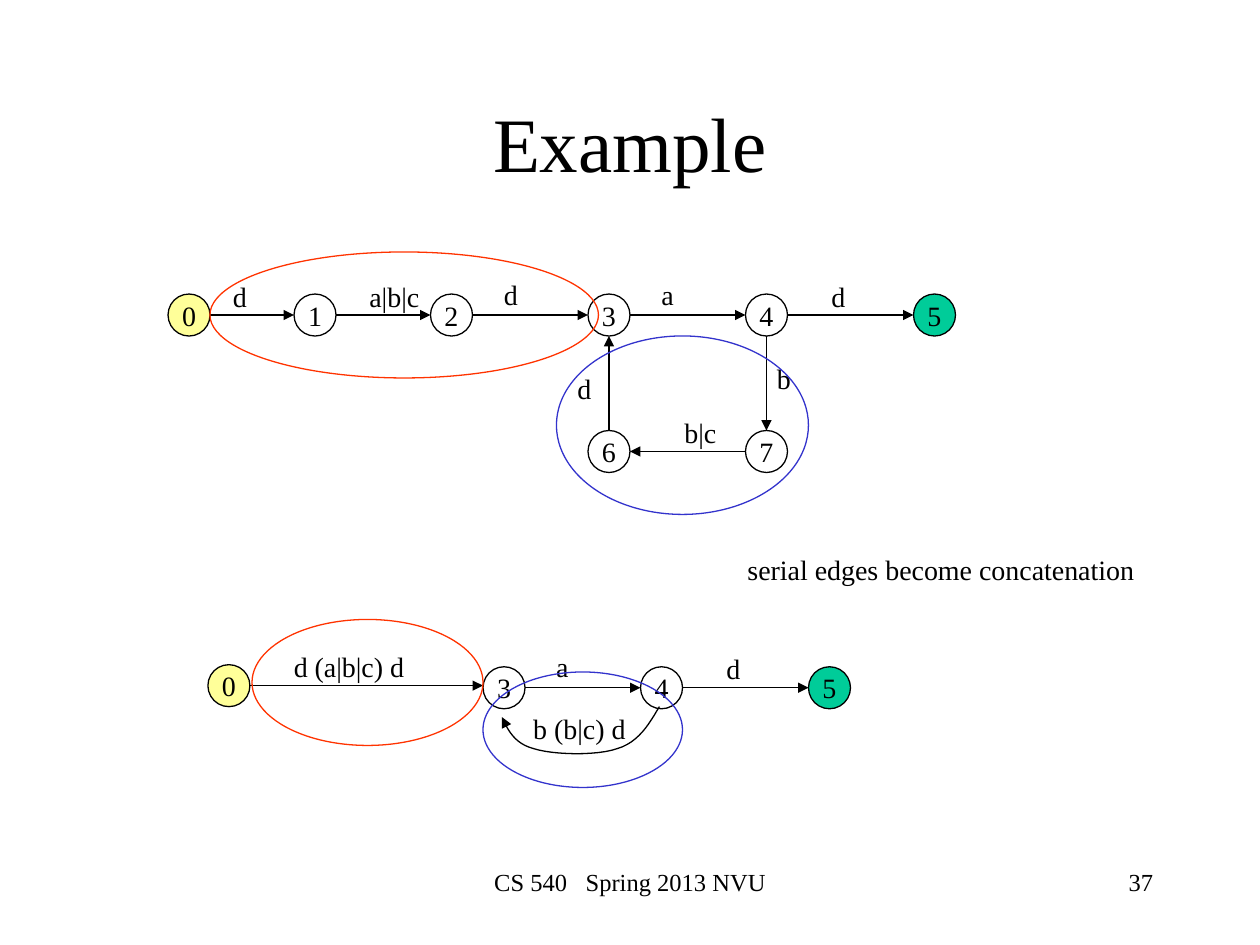
"""Build the slide on merging serial edges of a state graph."""
from dataclasses import dataclass

from lxml.etree import SubElement
from pptx import Presentation
from pptx.dml.color import RGBColor
from pptx.enum.shapes import MSO_CONNECTOR, MSO_SHAPE
from pptx.enum.text import MSO_ANCHOR, MSO_AUTO_SIZE, PP_ALIGN
from pptx.oxml.ns import qn
from pptx.util import Emu, Pt

PX = 7620
RAD = 20
FONT = "Times New Roman"
BLACK, RED, BLUE = "000000", "FF3300", "3333CC"
YELLOW, GREEN = "FFFF99", "00CC99"


@dataclass
class Node:
    name: str
    x: int
    y: int
    fill: str = ""


@dataclass
class Label:
    text: str
    x: int
    y: int
    w: int


@dataclass
class Ring:
    x: int
    y: int
    w: int
    h: int
    hue: str


TOP = [
    Node("0", 180, 300, YELLOW), Node("1", 300, 300), Node("2", 430, 300),
    Node("3", 580, 300), Node("4", 730, 300), Node("5", 890, 300, GREEN),
    Node("6", 580, 430), Node("7", 730, 430),
]
LOW = [
    Node("0", 218, 653, YELLOW), Node("3", 480, 655),
    Node("4", 630, 655), Node("5", 790, 655, GREEN),
]
GRAPHS = [(TOP, "01 12 23 34 45 47 76 63"), (LOW, "03 34 45")]
LABELS = [
    Label("d", 210, 260, 37), Label("a|b|c", 340, 260, 72),
    Label("d", 468, 258, 37), Label("a", 618, 258, 36),
    Label("d", 780, 260, 37), Label("b", 728, 338, 37),
    Label("b|c", 640, 390, 55), Label("d", 538, 348, 37),
    Label("d (a|b|c) d", 268, 613, 130), Label("a", 518, 613, 36),
    Label("d", 680, 615, 37), Label("b (b|c) d", 496, 672, 113),
    Label("serial edges become concatenation", 700, 520, 395),
]
RINGS = [
    Ring(200, 240, 370, 120, RED), Ring(530, 320, 240, 170, BLUE),
    Ring(240, 590, 220, 120, RED), Ring(460, 640, 190, 110, BLUE),
]
LOOP = [
    (628, 673), (618, 690), (608, 707), (588, 713), (568, 720),
    (527, 719), (508, 713), (490, 708), (484, 696), (478, 683),
]


def px(*nums: float) -> list[Emu]:
    """Turn px lengths into EMU."""
    return [Emu(round(n * PX)) for n in nums]


def color(code: str) -> RGBColor:
    """Turn a hex string into a colour."""
    return RGBColor.from_string(code)


def style(para, size: int, align=PP_ALIGN.LEFT) -> None:
    """Format a paragraph and its runs."""
    para.alignment = align
    for run in para.runs:
        run.font.size = Pt(size)
        run.font.name = FONT
        run.font.color.rgb = color(BLACK)


def stroke(shape, hue: str = BLACK) -> None:
    """Give a shape or connector a thin line."""
    shape.line.width = Pt(0.75)
    shape.line.color.rgb = color(hue)


def arrow(shape) -> None:
    """End a line with a triangle."""
    SubElement(shape.line._get_or_add_ln(), qn("a:tailEnd"), type="triangle")


def oval(slide, ring: Ring, fill: str = ""):
    """Draw an ellipse."""
    shape = slide.shapes.add_shape(
        MSO_SHAPE.OVAL, *px(ring.x, ring.y, ring.w, ring.h))
    shape.shadow.inherit = False
    if fill:
        shape.fill.solid()
        shape.fill.fore_color.rgb = color(fill)
    else:
        shape.fill.background()
    stroke(shape, ring.hue)
    return shape


def state(slide, node: Node) -> None:
    """Draw a numbered state."""
    ring = Ring(node.x - RAD, node.y - RAD, 2 * RAD, 2 * RAD, BLACK)
    frame = oval(slide, ring, node.fill).text_frame
    frame.word_wrap = False
    frame.vertical_anchor = MSO_ANCHOR.MIDDLE
    frame.text = node.name
    style(frame.paragraphs[0], 16, PP_ALIGN.CENTER)


def edge(slide, a: Node, b: Node) -> None:
    """Draw a level or upright arrow between two states."""
    if abs(b.x - a.x) > abs(b.y - a.y):
        step = RAD if b.x > a.x else -RAD
        ends = (a.x + step, a.y, b.x - step, a.y)
    else:
        step = RAD if b.y > a.y else -RAD
        ends = (a.x, a.y + step, a.x, b.y - step)
    line = slide.shapes.add_connector(MSO_CONNECTOR.STRAIGHT, *px(*ends))
    stroke(line)
    arrow(line)
    SubElement(line._element.spPr, qn("a:effectLst"))


def curve(slide, dots: list[tuple[int, int]], steps: int = 12) -> None:
    """Draw a chain of cubic curves ending in an arrow."""
    path = []
    for i in range(0, len(dots) - 1, 3):
        for k in range(1, steps + 1):
            t = k / steps
            u = 1 - t
            mix = (u ** 3, 3 * u * u * t, 3 * u * t * t, t ** 3)
            path.append(tuple(
                sum(m * dot[axis] for m, dot in zip(mix, dots[i:i + 4]))
                for axis in (0, 1)))
    form = slide.shapes.build_freeform(*px(*dots[0]), scale=1.0)
    form.add_line_segments([px(*dot) for dot in path], close=False)
    shape = form.convert_to_shape()
    shape.shadow.inherit = False
    shape.fill.background()
    stroke(shape)
    arrow(shape)


def label(slide, item: Label) -> None:
    """Write a one-line label."""
    frame = slide.shapes.add_textbox(
        *px(item.x, item.y, item.w, 44)).text_frame
    frame.word_wrap = False
    frame.auto_size = MSO_AUTO_SIZE.SHAPE_TO_FIT_TEXT
    frame.text = item.text
    style(frame.paragraphs[0], 16)


def foot(slide, x: int, w: int, parts: list[str], align) -> None:
    """Write a footer, with its parts set apart by a wide space."""
    frame = slide.shapes.add_textbox(*px(x, 820, w, 60)).text_frame
    frame.word_wrap = True
    para = frame.paragraphs[0]
    for i, part in enumerate(parts):
        if i:
            gap = para.add_run()
            gap.text = " "
            gap._r.get_or_add_rPr().set("spc", "700")
        para.add_run().text = part
    style(para, 14, align)


def main() -> None:
    """Build and save the slide."""
    deck = Presentation()
    deck.slide_width, deck.slide_height = px(1200, 900)
    slide = deck.slides.add_slide(deck.slide_layouts[5])
    title = slide.shapes.title
    title.left, title.top, title.width, title.height = px(90, 60, 1020, 150)
    frame = title.text_frame
    frame.text = "Example"
    frame.auto_size = MSO_AUTO_SIZE.NONE
    frame.vertical_anchor = MSO_ANCHOR.MIDDLE
    style(frame.paragraphs[0], 44, PP_ALIGN.CENTER)
    foot(slide, 410, 380, ["CS 540", "Spring 2013 NVU"], PP_ALIGN.CENTER)
    foot(slide, 860, 250, ["37"], PP_ALIGN.RIGHT)
    for nodes, pairs in GRAPHS:
        names = {node.name: node for node in nodes}
        for node in nodes:
            state(slide, node)
        for a, b in pairs.split():
            edge(slide, names[a], names[b])
    curve(slide, LOOP)
    for item in LABELS:
        label(slide, item)
    for ring in RINGS:
        oval(slide, ring)
    deck.save("out.pptx")


if __name__ == "__main__":
    main()
